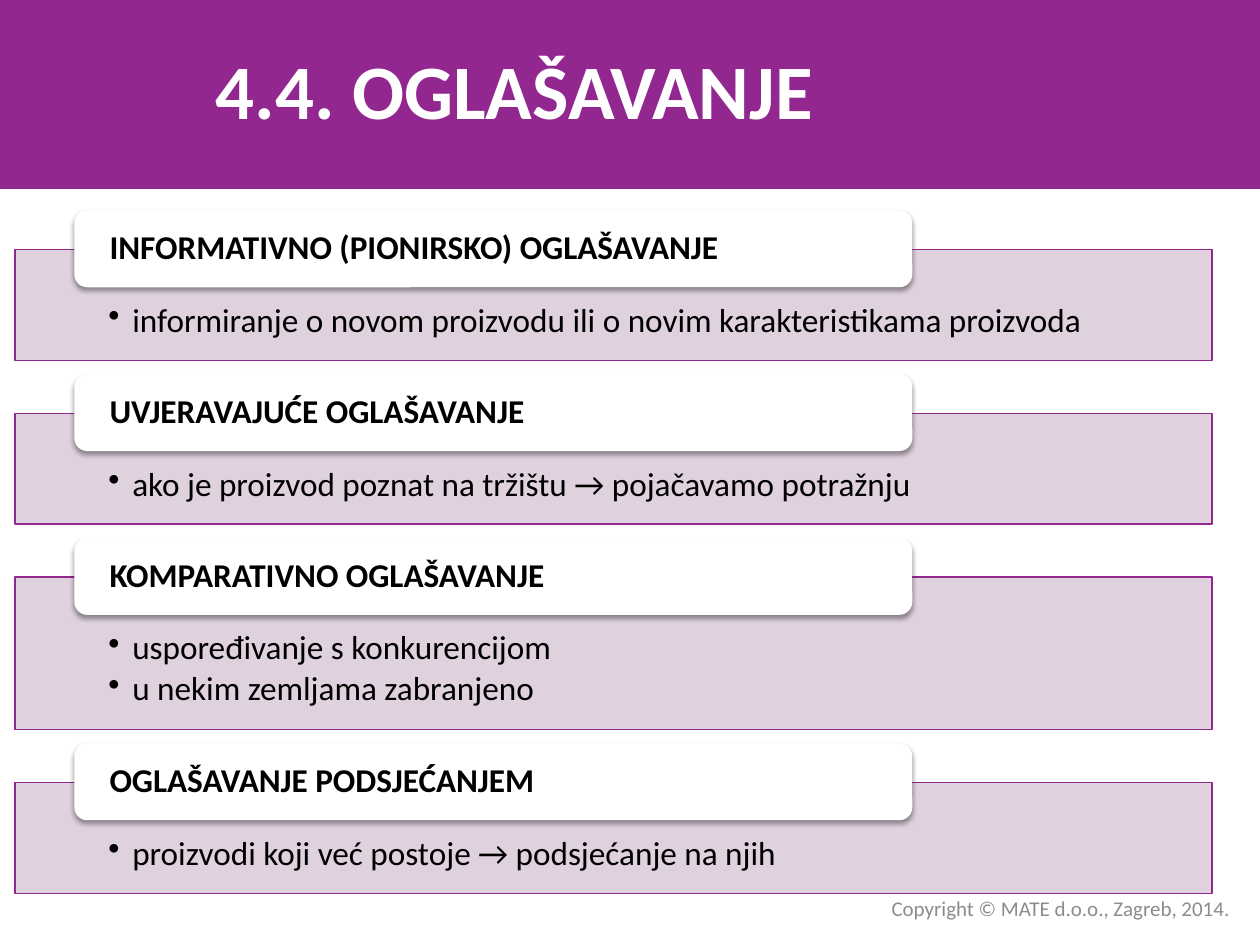
from dataclasses import dataclass

from lxml import etree
from pptx import Presentation
from pptx.dml.color import RGBColor
from pptx.enum import shapes, text
from pptx.oxml import ns
from pptx.util import Emu, Inches, Pt

COLUMNS, ROWS = 100, 75
PURPLE, LILAC, WHITE, BLACK, GREY = "92278F", "DCCDDB", "FFFFFF", "000000", "8C8C8C"
FIRST_ROW, PANEL_ROWS, EXTRA_LINE_ROWS, GAP_ROWS = 19.8, 8.8, 3.3, 4.2
TAB_RISE = 3.1


@dataclass(frozen=True)
class Area:
    column: float
    row: float
    columns: float
    rows: float


@dataclass(frozen=True)
class Section:
    heading: str
    points: tuple[str, ...]

    @property
    def rows(self) -> float:
        return PANEL_ROWS + EXTRA_LINE_ROWS * (len(self.points) - 1)


SECTIONS = (
    Section("INFORMATIVNO (PIONIRSKO) OGLAŠAVANJE",
            ("informiranje o novom proizvodu ili o novim karakteristikama proizvoda",)),
    Section("UVJERAVAJUĆE OGLAŠAVANJE",
            ("ako je proizvod poznat na tržištu → pojačavamo potražnju",)),
    Section("KOMPARATIVNO OGLAŠAVANJE",
            ("uspoređivanje s konkurencijom", "u nekim zemljama zabranjeno")),
    Section("OGLAŠAVANJE PODSJEĆANJEM",
            ("proizvodi koji već postoje → podsjećanje na njih",)),
)

deck = Presentation()
deck.slide_width, deck.slide_height = Inches(10), Inches(7.5)
page = deck.slides.add_slide(deck.slide_layouts[6])


def colour(value: str) -> RGBColor:
    return RGBColor.from_string(value)


def apply(target, values: dict) -> None:
    for name, value in values.items():
        setattr(target, name, value)


def place(area: Area) -> tuple[Emu, ...]:
    cell_width, cell_height = deck.slide_width / COLUMNS, deck.slide_height / ROWS
    return (Emu(round(area.column * cell_width)), Emu(round(area.row * cell_height)),
            Emu(round(area.columns * cell_width)), Emu(round(area.rows * cell_height)))


def add_child(parent, tag: str, **attributes: str):
    return etree.SubElement(parent, ns.qn(tag), attributes)


def add_block(kind, area: Area, fill: str, line: str | None = None):
    block = page.shapes.add_shape(kind, *place(area))
    block.shadow.inherit = False
    block.fill.solid()
    block.fill.fore_color.rgb = colour(fill)
    if line:
        block.line.color.rgb = colour(line)
        block.line.width = Pt(0.75)
    else:
        block.line.fill.background()
    return block


def write(box, lines: tuple[str, ...], frame_format: dict, para_format: dict,
          font_format: dict, ink: str, bullets: bool = False) -> None:
    frame = box.text_frame
    apply(frame, {"word_wrap": True, **frame_format})
    for index, line in enumerate(lines):
        para = frame.add_paragraph() if index else frame.paragraphs[0]
        apply(para, para_format)
        if bullets:
            properties = para._p.get_or_add_pPr()
            properties.set("marL", str(Inches(0.19)))
            properties.set("indent", str(Inches(-0.19)))
            add_child(properties, "a:buChar", char="•")
        span = para.add_run()
        span.text = line
        apply(span.font, {"name": "Calibri", **font_format})
        span.font.color.rgb = colour(ink)


def add_shadow(block) -> None:
    effects = block._element.spPr.find(ns.qn("a:effectLst"))
    shadow = add_child(effects, "a:outerShdw", blurRad=str(Pt(3.1)), dist=str(Pt(1.6)),
                       dir="5400000", rotWithShape="0")
    add_child(add_child(shadow, "a:srgbClr", val=BLACK), "a:alpha", val="38000")


def add_section(section: Section, row: float) -> None:
    panel = add_block(shapes.MSO_SHAPE.RECTANGLE, Area(1.2, row, 95, section.rows), LILAC, PURPLE)
    fill_colour = panel._element.spPr.find(ns.qn("a:solidFill"))[0]
    add_child(fill_colour, "a:alpha", val="90000")
    write(panel, section.points,
          {"margin_left": Inches(0.74), "margin_right": Inches(0.74), "margin_top": Inches(0.43),
           "margin_bottom": Inches(0.15), "vertical_anchor": text.MSO_ANCHOR.TOP},
          {"alignment": text.PP_ALIGN.LEFT, "line_spacing": 0.9, "space_after": Pt(2.85)},
          {"size": Pt(19)}, BLACK, bullets=True)
    tab = add_block(shapes.MSO_SHAPE.ROUNDED_RECTANGLE, Area(5.9, row - TAB_RISE, 66.5, 6.1), WHITE)
    add_shadow(tab)
    write(tab, (section.heading,),
          {"margin_left": Inches(0.25), "margin_right": Inches(0.25), "margin_top": 0,
           "margin_bottom": 0, "vertical_anchor": text.MSO_ANCHOR.MIDDLE},
          {"alignment": text.PP_ALIGN.LEFT, "line_spacing": 0.9},
          {"size": Pt(19), "bold": True}, BLACK)


def add_caption(words: str, area: Area, alignment, font_format: dict, ink: str) -> None:
    box = page.shapes.add_textbox(*place(area))
    write(box, (words,), {"vertical_anchor": text.MSO_ANCHOR.MIDDLE},
          {"alignment": alignment}, font_format, ink)


def main() -> None:
    add_block(shapes.MSO_SHAPE.RECTANGLE, Area(0, 0, COLUMNS, 15), PURPLE)
    row = FIRST_ROW
    for section in SECTIONS:
        add_section(section, row)
        row += section.rows + GAP_ROWS
    add_caption("4.4. OGLAŠAVANJE", Area(0, 0.8, 81.7, 12.5), text.PP_ALIGN.CENTER,
                {"size": Pt(44), "bold": True}, WHITE)
    add_caption("Copyright © MATE d.o.o., Zagreb, 2014.", Area(46.9, 70.6, 51.7, 3),
                text.PP_ALIGN.RIGHT, {"size": Pt(12)}, GREY)
    deck.save("out.pptx")


if __name__ == "__main__":
    main()
